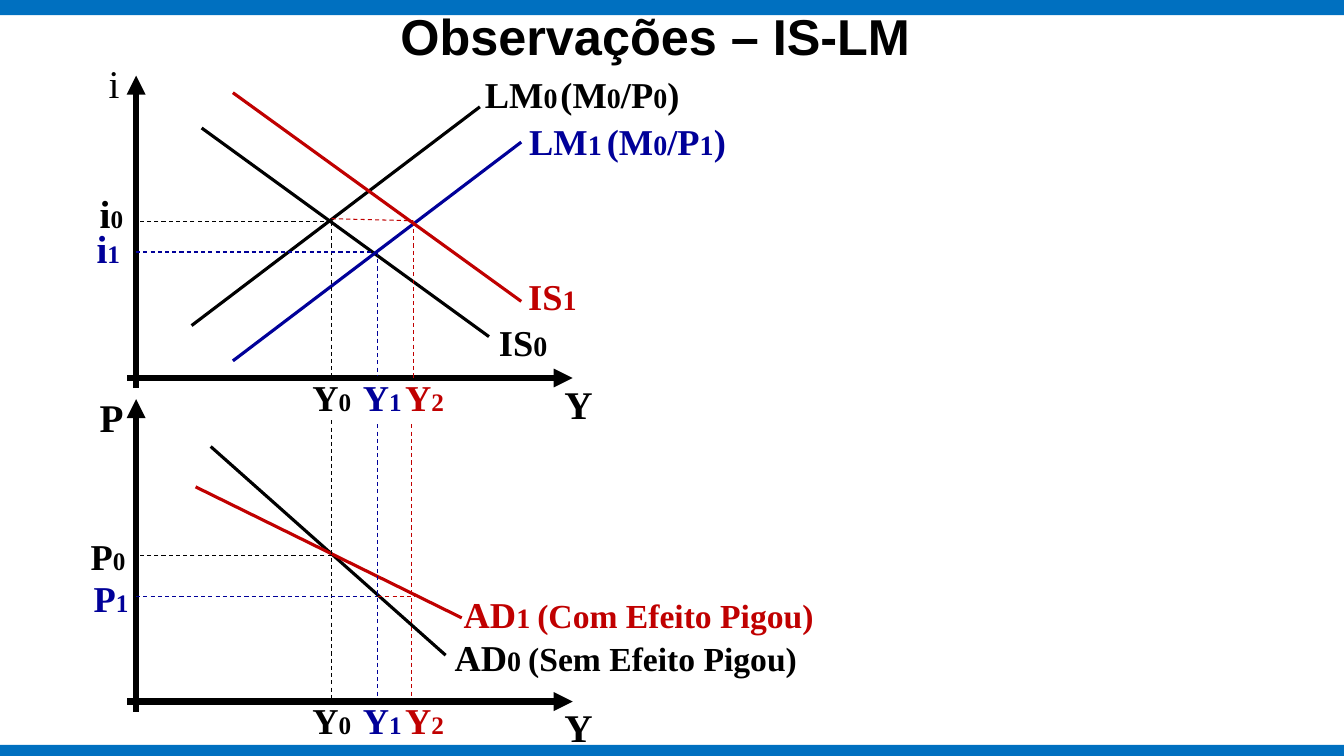
from lxml.etree import SubElement
from pptx import Presentation
from pptx.dml.color import RGBColor
from pptx.enum.dml import MSO_LINE
from pptx.enum.shapes import MSO_CONNECTOR, MSO_SHAPE
from pptx.enum.text import MSO_ANCHOR, MSO_AUTO_SIZE, PP_ALIGN
from pptx.oxml.ns import qn
from pptx.util import Inches, Pt

BLACK = RGBColor(0x00, 0x00, 0x00)
NAVY = RGBColor(0x00, 0x00, 0x99)
RED = RGBColor(0xC0, 0x00, 0x00)
BAND_BLUE = RGBColor(0x00, 0x70, 0xC0)
PANEL_STEP = 3.21


class EconomicsSlide:
    """Draws curves, guides, axes and labels on one slide."""

    def __init__(self, slide):
        self.slide = slide
        self.label_font = "Times New Roman"
        self.title_font = "Arial"

    def band(self, top, height):
        shape = self.slide.shapes.add_shape(
            MSO_SHAPE.RECTANGLE, 0, Inches(top), Inches(13.33), Inches(height))
        shape.shadow.inherit = False
        shape.fill.solid()
        shape.fill.fore_color.rgb = BAND_BLUE
        shape.line.fill.background()

    def line(self, start, end, color, width):
        connector = self.slide.shapes.add_connector(
            MSO_CONNECTOR.STRAIGHT, *[Inches(length) for length in (*start, *end)])
        connector.line.color.rgb = color
        connector.line.width = Pt(width)
        SubElement(connector._element.spPr, qn("a:effectLst"))
        return connector

    def curve(self, start, end, color):
        self.line(start, end, color, 2.25)

    def guide(self, start, end, color):
        self.line(start, end, color, 0.75).line.dash_style = MSO_LINE.DASH

    def axis(self, start, end):
        connector = self.line(start, end, BLACK, 4.5)
        SubElement(connector.line._get_or_add_ln(), qn("a:tailEnd"), type="triangle")

    def text_box(self, left, top, width, height):
        box = self.slide.shapes.add_textbox(
            Inches(left), Inches(top), Inches(width), Inches(height))
        box.text_frame.word_wrap = True
        return box.text_frame

    def add_run(self, paragraph, text, size, font_name, color, bold):
        run = paragraph.add_run()
        run.text = text
        run.font.size = Pt(size)
        run.font.name = font_name
        run.font.color.rgb = color
        run.font.bold = bold

    def label(self, left, top, width, color, *parts, bold=True):
        height = 0.15 + 0.015 * parts[0][1]
        frame = self.text_box(left, top, width, height)
        frame.auto_size = MSO_AUTO_SIZE.SHAPE_TO_FIT_TEXT
        for text, size in parts:
            self.add_run(frame.paragraphs[0], text, size, self.label_font, color, bold)

    def title(self, text):
        frame = self.text_box(0.75, -0.75, 11.5, 1.45)
        frame.vertical_anchor = MSO_ANCHOR.BOTTOM
        paragraph = frame.paragraphs[0]
        paragraph.alignment = PP_ALIGN.CENTER
        self.add_run(paragraph, text, 36, self.title_font, BLACK, True)


def draw_panel_axes(drawing, offset):
    drawing.axis((1.35, 3.85 + offset), (1.35, 0.75 + offset))
    drawing.axis((1.26, 3.75 + offset), (5.68, 3.75 + offset))
    drawing.label(5.5, 3.72 + offset, 0.64, BLACK, ("Y", 28))
    for index, (left, color) in enumerate([(3, BLACK), (3.5, NAVY), (3.92, RED)]):
        drawing.label(left, 3.67 + offset, 0.83, color, ("Y", 26), (str(index), 18))


def main():
    presentation = Presentation()
    presentation.slide_width = Inches(13.33)
    presentation.slide_height = Inches(7.5)
    drawing = EconomicsSlide(presentation.slides.add_slide(presentation.slide_layouts[6]))

    drawing.band(-0.03, 0.18)
    drawing.band(7.39, 0.13)
    for panel in range(2):
        draw_panel_axes(drawing, panel * PANEL_STEP)

    for start, end, color in [
        ((2, 1.27), (4.85, 3.34), BLACK),
        ((1.9, 3.23), (4.76, 1.06), BLACK),
        ((2.09, 4.43), (4.42, 6.5), BLACK),
        ((2.31, 3.58), (5.17, 1.41), NAVY),
        ((2.31, 0.92), (5.17, 2.99), RED),
        ((1.94, 4.83), (4.58, 6.13), RED),
    ]:
        drawing.curve(start, end, color)

    for start, end, color in [
        ((3.29, 2.2), (3.29, 3.75), BLACK),
        ((3.29, 2.2), (1.35, 2.2), BLACK),
        ((3.29, 4.17), (3.29, 6.96), BLACK),
        ((3.29, 5.51), (1.35, 5.51), BLACK),
        ((1.35, 2.5), (3.74, 2.5), NAVY),
        ((3.74, 2.5), (3.74, 3.73), NAVY),
        ((3.74, 4.21), (3.74, 6.92), NAVY),
        ((1.35, 5.92), (3.74, 5.92), NAVY),
        ((3.29, 2.17), (4.1, 2.19), RED),
        ((4.1, 2.2), (4.1, 3.75), RED),
        ((4.08, 4.21), (4.08, 6.92), RED),
        ((3.75, 5.92), (4.12, 5.92), RED),
    ]:
        drawing.guide(start, end, color)

    drawing.label(0.98, 0.54, 0.37, BLACK, ("i", 28), bold=False)
    drawing.label(0.89, 3.85, 0.64, BLACK, ("P", 28))

    for left, top, width, color, name, size, index, index_size in [
        (4.71, 0.67, 1.01, BLACK, "LM", 26, "0", 20),
        (5.15, 1.13, 1.01, NAVY, "LM", 26, "1", 20),
        (4.85, 3.13, 1.2, BLACK, "IS", 26, "0", 20),
        (5.14, 2.67, 1.2, RED, "IS", 26, "1", 20),
        (0.89, 1.83, 0.55, BLACK, "i", 28, "0", 18),
        (0.86, 2.18, 0.55, NAVY, "i", 28, "1", 18),
        (0.8, 5.25, 0.55, BLACK, "P", 26, "0", 18),
        (0.83, 5.67, 0.55, NAVY, "P", 26, "1", 18),
    ]:
        drawing.label(left, top, width, color, (name, size), (index, index_size))

    for left, top, width, color, index in [
        (5.46, 0.67, 2.12, BLACK, "0"),
        (5.92, 1.13, 1.54, NAVY, "1"),
    ]:
        drawing.label(left, top, width, color,
                      ("(M", 26), ("0", 20), ("/P", 26), (index, 20), (")", 26))

    for left, top, color, index, effect in [
        (4.41, 6.25, BLACK, "0 ", "(Sem Efeito Pigou)"),
        (4.5, 5.83, RED, "1 ", "(Com Efeito Pigou)"),
    ]:
        drawing.label(left, top, 5.04, color, ("AD", 26), (index, 20), (effect, 24))

    drawing.title("Observações – IS-LM")
    presentation.save("out.pptx")


if __name__ == "__main__":
    main()
